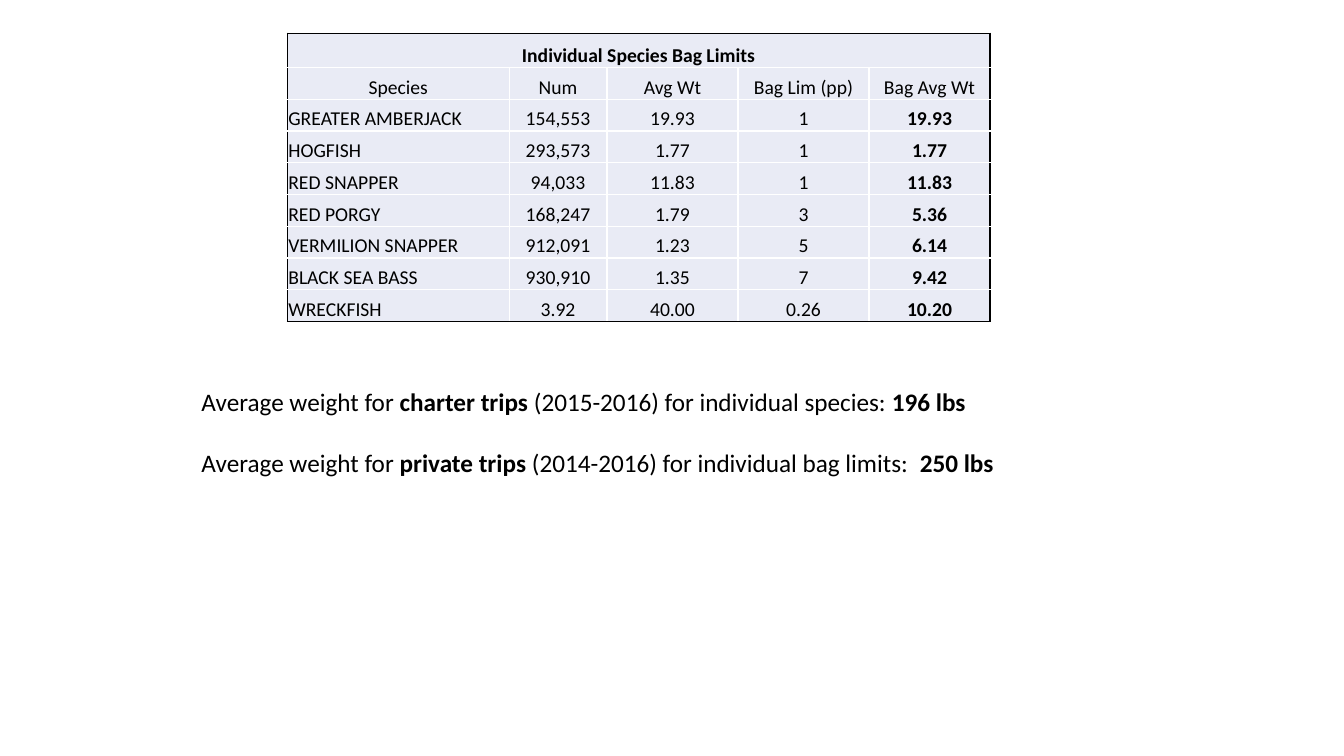
import pptx
import pptx.dml.color
import pptx.enum.text
import pptx.oxml
import pptx.oxml.ns
import pptx.util
from pptx.util import Inches

BLACK = pptx.dml.color.RGBColor(0x00, 0x00, 0x00)
WHITE = pptx.dml.color.RGBColor(0xFF, 0xFF, 0xFF)
PALE_BLUE = pptx.dml.color.RGBColor(0xE9, 0xEB, 0xF5)
FONT_NAME = "Calibri"

TABLE_TITLE = "Individual Species Bag Limits"
COLUMN_WIDTHS = [2.2, 0.97, 1.3, 1.3, 1.2]
TITLE_HEIGHT = 0.34
BAG_LIMITS = [
    ["Species", "Num", "Avg Wt", "Bag Lim (pp)", "Bag Avg Wt"],
    ["GREATER AMBERJACK", "154,553", "19.93", "1", "19.93"],
    ["HOGFISH", "293,573", "1.77", "1", "1.77"],
    ["RED SNAPPER", "94,033", "11.83", "1", "11.83"],
    ["RED PORGY", "168,247", "1.79", "3", "5.36"],
    ["VERMILION SNAPPER", "912,091", "1.23", "5", "6.14"],
    ["BLACK SEA BASS", "930,910", "1.35", "7", "9.42"],
    ["WRECKFISH", "3.92", "40.00", "0.26", "10.20"],
]
TRIP_WEIGHTS = [
    [("Average weight for ", False), ("charter trips ", True),
     ("(2015-2016) for individual species: ", False), ("196 lbs", True)],
    [("Average weight for ", False), ("private trips ", True),
     ("(2014-2016) for individual bag limits:  ", False), ("250 lbs", True)],
]
CELL_FORMAT = {
    "margin_left": Inches(0.01),
    "margin_right": Inches(0.01),
    "margin_top": Inches(0.01),
    "margin_bottom": 0,
    "vertical_anchor": pptx.enum.text.MSO_ANCHOR.BOTTOM,
}


def set_attributes(target, values):
    for name, value in values.items():
        setattr(target, name, value)


def add_run(paragraph, text, size, bold):
    run = paragraph.add_run()
    run.text = text
    set_attributes(run.font, {"name": FONT_NAME, "size": pptx.util.Pt(size), "bold": bold})
    run.font.color.rgb = BLACK


def set_borders(cell, colors):
    properties = cell._tc.get_or_add_tcPr()
    for side, color in zip("LRTB", colors):
        properties.append(pptx.oxml.parse_xml(
            f'<a:ln{side} {pptx.oxml.ns.nsdecls("a")} w="{pptx.util.Pt(1)}">'
            f'<a:solidFill><a:srgbClr val="{color}"/></a:solidFill></a:ln{side}>'))


def add_bag_limit_table(slide, left, top, width, height):
    rows = [[TABLE_TITLE] + [""] * (len(COLUMN_WIDTHS) - 1)] + BAG_LIMITS
    last_row, last_column = len(rows) - 1, len(COLUMN_WIDTHS) - 1
    table = slide.shapes.add_table(
        len(rows), len(COLUMN_WIDTHS),
        Inches(left), Inches(top), Inches(width), Inches(height)).table
    set_attributes(table, {"first_row": False, "horz_banding": False})
    for column, column_width in zip(table.columns, COLUMN_WIDTHS):
        column.width = Inches(column_width)
    for row in table.rows:
        row.height = Inches((height - TITLE_HEIGHT) / last_row)
    table.rows[0].height = Inches(TITLE_HEIGHT)
    table.cell(0, 0).merge(table.cell(0, last_column))

    for row_index, values in enumerate(rows):
        for column_index, text in enumerate(values):
            cell = table.cell(row_index, column_index)
            set_attributes(cell, CELL_FORMAT)
            outer_sides = [
                column_index == 0,
                column_index == last_column or cell.is_merge_origin,
                row_index == 0,
                row_index == last_row,
            ]
            set_borders(cell, [BLACK if outer else WHITE for outer in outer_sides])
            cell.fill.solid()
            cell.fill.fore_color.rgb = PALE_BLUE
            if text:
                is_species = row_index > 1 and column_index == 0
                is_bold = row_index == 0 or (row_index > 1 and column_index == last_column)
                paragraph = cell.text_frame.paragraphs[0]
                alignment = pptx.enum.text.PP_ALIGN
                paragraph.alignment = alignment.LEFT if is_species else alignment.CENTER
                add_run(paragraph, text, 14, is_bold)


def add_trip_weights(slide, left, top, width, height):
    text_box = slide.shapes.add_textbox(
        Inches(left), Inches(top), Inches(width), Inches(height))
    text_frame = text_box.text_frame
    text_frame.word_wrap = True
    for index, parts in enumerate(TRIP_WEIGHTS):
        paragraph = text_frame.add_paragraph() if index else text_frame.paragraphs[0]
        paragraph.space_before = pptx.util.Pt(22 if index else 0)
        for text, bold in parts:
            add_run(paragraph, text, 18, bold)


def main():
    presentation = pptx.Presentation()
    set_attributes(presentation, {"slide_width": Inches(13.33), "slide_height": Inches(7.5)})
    slide = presentation.slides.add_slide(presentation.slide_layouts[6])
    add_bag_limit_table(slide, 2.85, 0.33, 6.97, 2.86)
    add_trip_weights(slide, 1.9, 3.78, 9.12, 1.01)
    presentation.save("out.pptx")


if __name__ == "__main__":
    main()
